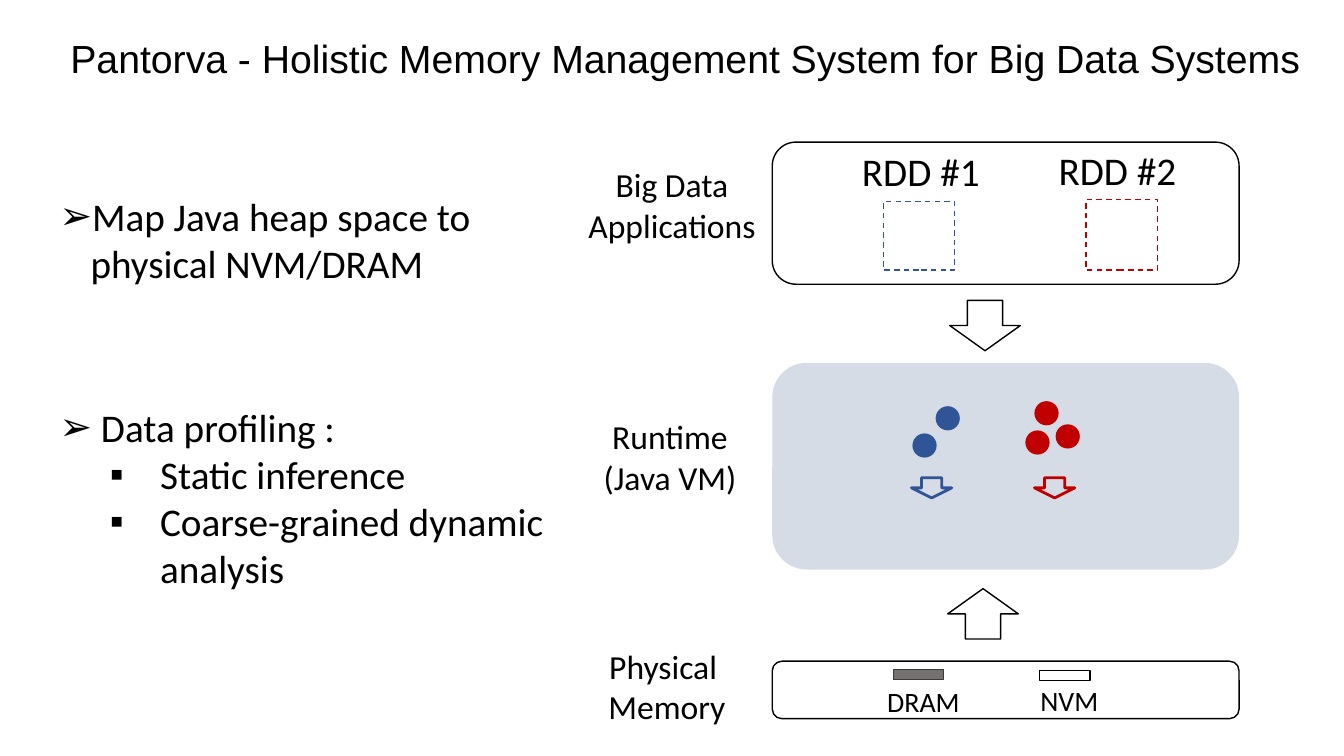
from dataclasses import dataclass
from typing import Optional

from lxml.etree import SubElement
from pptx import Presentation
from pptx.dml.color import RGBColor
from pptx.enum.dml import MSO_LINE
from pptx.enum.shapes import MSO_SHAPE
from pptx.enum.text import MSO_ANCHOR, MSO_AUTO_SIZE, PP_ALIGN
from pptx.oxml.ns import qn
from pptx.util import Inches, Pt


@dataclass(frozen=True)
class Theme:
    black: str = "000000"
    blue: str = "2F5597"
    red: str = "C00000"
    runtime: str = "D6DCE5"
    dram: str = "767171"
    dram_edge: str = "3B3838"
    heading_font: str = "Arial"
    body_font: str = "Calibri"
    bullet_font: str = "Arial"
    large: int = 28
    medium: int = 24
    small: int = 20


THEME = Theme()


@dataclass(frozen=True)
class Box:
    left: float
    top: float
    width: float
    height: float

    def emu(self) -> tuple:
        return tuple(Inches(v) for v in (self.left, self.top, self.width, self.height))


@dataclass(frozen=True)
class Figure:
    kind: MSO_SHAPE
    box: Box
    fill: Optional[str] = None
    line: Optional[str] = None
    weight: float = 1
    dashed: bool = False


@dataclass(frozen=True)
class Para:
    text: str
    bullet: str = ""
    margin: float = 0
    hanging: float = 0
    level: int = 0


@dataclass(frozen=True)
class Label:
    box: Box
    paras: tuple
    size: int
    align: PP_ALIGN = PP_ALIGN.LEFT
    wrap: bool = True
    font: str = THEME.body_font


def dot(left: float, top: float, color: str) -> Figure:
    return Figure(MSO_SHAPE.OVAL, Box(left, top, 0.24, 0.24), fill=color)


def panel(top: float, height: float, **style) -> Figure:
    """One layer of the memory stack; all layers share an edge and a width."""
    return Figure(MSO_SHAPE.ROUNDED_RECTANGLE, Box(7.66, top, 4.63, height), **style)


def point(text: str) -> Para:
    return Para(text, "➢", 0.31, 0.31)


def subpoint(text: str) -> Para:
    return Para(text, "▪", 1, 0.5, 1)


def layer_name(box: Box, *lines: str, wrap: bool = True) -> Label:
    return Label(box, tuple(Para(t) for t in lines), THEME.medium, PP_ALIGN.CENTER, wrap)


def tag(box: Box, text: str, size: int) -> Label:
    return Label(box, (Para(text),), size, wrap=False)


FIGURES = (
    panel(1.41, 1.41, line=THEME.black),
    panel(3.6, 2.05, fill=THEME.runtime),
    panel(6.56, 0.57, line=THEME.black),
    Figure(MSO_SHAPE.RECTANGLE, Box(8.76, 2, 0.71, 0.68), line=THEME.blue, dashed=True),
    Figure(MSO_SHAPE.RECTANGLE, Box(10.77, 1.98, 0.71, 0.7), line=THEME.red, dashed=True),
    Figure(MSO_SHAPE.DOWN_ARROW, Box(9.42, 2.98, 0.7, 0.5), line=THEME.black),
    Figure(MSO_SHAPE.UP_ARROW, Box(9.4, 5.84, 0.7, 0.5), line=THEME.black),
    dot(9.28, 4.03, THEME.blue),
    dot(9.05, 4.3, THEME.blue),
    dot(10.26, 3.98, THEME.red),
    dot(10.17, 4.27, THEME.red),
    dot(10.47, 4.21, THEME.red),
    Figure(MSO_SHAPE.DOWN_ARROW, Box(9.04, 4.74, 0.4, 0.2), line=THEME.blue, weight=2),
    Figure(MSO_SHAPE.DOWN_ARROW, Box(10.26, 4.74, 0.4, 0.2), line=THEME.red, weight=2),
    Figure(MSO_SHAPE.RECTANGLE, Box(8.86, 6.64, 0.5, 0.1), THEME.dram, THEME.dram_edge),
    Figure(MSO_SHAPE.RECTANGLE, Box(10.31, 6.65, 0.5, 0.1), line=THEME.black),
)

TITLE = Label(
    Box(0.6, 0.14, 12.67, 0.93),
    (Para("Pantorva - Holistic Memory Management System for Big Data Systems"),),
    THEME.large,
    font=THEME.heading_font,
)

LABELS = (
    Label(Box(0.49, 1.86, 4.38, 1.04),
          (point("Map Java heap space to physical NVM/DRAM"),), THEME.large),
    Label(Box(0.49, 3.95, 5.09, 1.99),
          (point(" Data profiling :"),
           subpoint("Static inference"),
           subpoint("Coarse-grained dynamic analysis")), THEME.large),
    layer_name(Box(5, 1.58, 3.33, 0.91), "Big Data", "Applications"),
    layer_name(Box(5.79, 4.08, 1.71, 0.91), "Runtime", "(Java VM)"),
    layer_name(Box(5.93, 6.36, 1.37, 0.91), "Physical ", "Memory", wrap=False),
    tag(Box(8.45, 1.41, 1.39, 0.57), "RDD #1", THEME.large),
    tag(Box(10.4, 1.4, 1.39, 0.57), "RDD #2", THEME.large),
    tag(Box(8.7, 6.74, 0.93, 0.44), "DRAM", THEME.small),
    tag(Box(10.22, 6.73, 0.78, 0.44), "NVM", THEME.small),
)


def draw_figure(s, figure: Figure):
    sp = s.shapes.add_shape(figure.kind, *figure.box.emu())
    sp.shadow.inherit = False
    if figure.fill:
        sp.fill.solid()
        sp.fill.fore_color.rgb = RGBColor.from_string(figure.fill)
    else:
        sp.fill.background()
    if figure.line:
        sp.line.color.rgb = RGBColor.from_string(figure.line)
        sp.line.width = Pt(figure.weight)
        if figure.dashed:
            sp.line.dash_style = MSO_LINE.DASH
    else:
        sp.line.fill.background()
    return sp


def set_bullet(p, para: Para) -> None:
    pPr = p._p.get_or_add_pPr()
    pPr.set("marL", str(Inches(para.margin)))
    pPr.set("indent", str(-Inches(para.hanging)))
    SubElement(pPr, qn("a:buFont")).set("typeface", THEME.bullet_font)
    SubElement(pPr, qn("a:buChar")).set("char", para.bullet)


def draw_label(s, label: Label):
    sp = s.shapes.add_textbox(*label.box.emu())
    tf = sp.text_frame
    tf.word_wrap = label.wrap
    tf.auto_size = MSO_AUTO_SIZE.SHAPE_TO_FIT_TEXT
    for i, para in enumerate(label.paras):
        p = tf.add_paragraph() if i else tf.paragraphs[0]
        p.alignment = label.align
        p.level = para.level
        if para.bullet:
            set_bullet(p, para)
        r = p.add_run()
        r.text = para.text
        r.font.name = label.font
        r.font.size = Pt(label.size)
        r.font.color.rgb = RGBColor.from_string(THEME.black)
    return sp


def main() -> None:
    prs = Presentation()
    prs.slide_width, prs.slide_height = Inches(13.33), Inches(7.5)
    s = prs.slides.add_slide(prs.slide_layouts[6])
    for figure in FIGURES:
        draw_figure(s, figure)
    tf = draw_label(s, TITLE).text_frame
    tf.auto_size = MSO_AUTO_SIZE.NONE
    tf.vertical_anchor = MSO_ANCHOR.MIDDLE
    tf.paragraphs[0].line_spacing = 0.9
    for label in LABELS:
        draw_label(s, label)
    prs.save("out.pptx")


if __name__ == "__main__":
    main()
